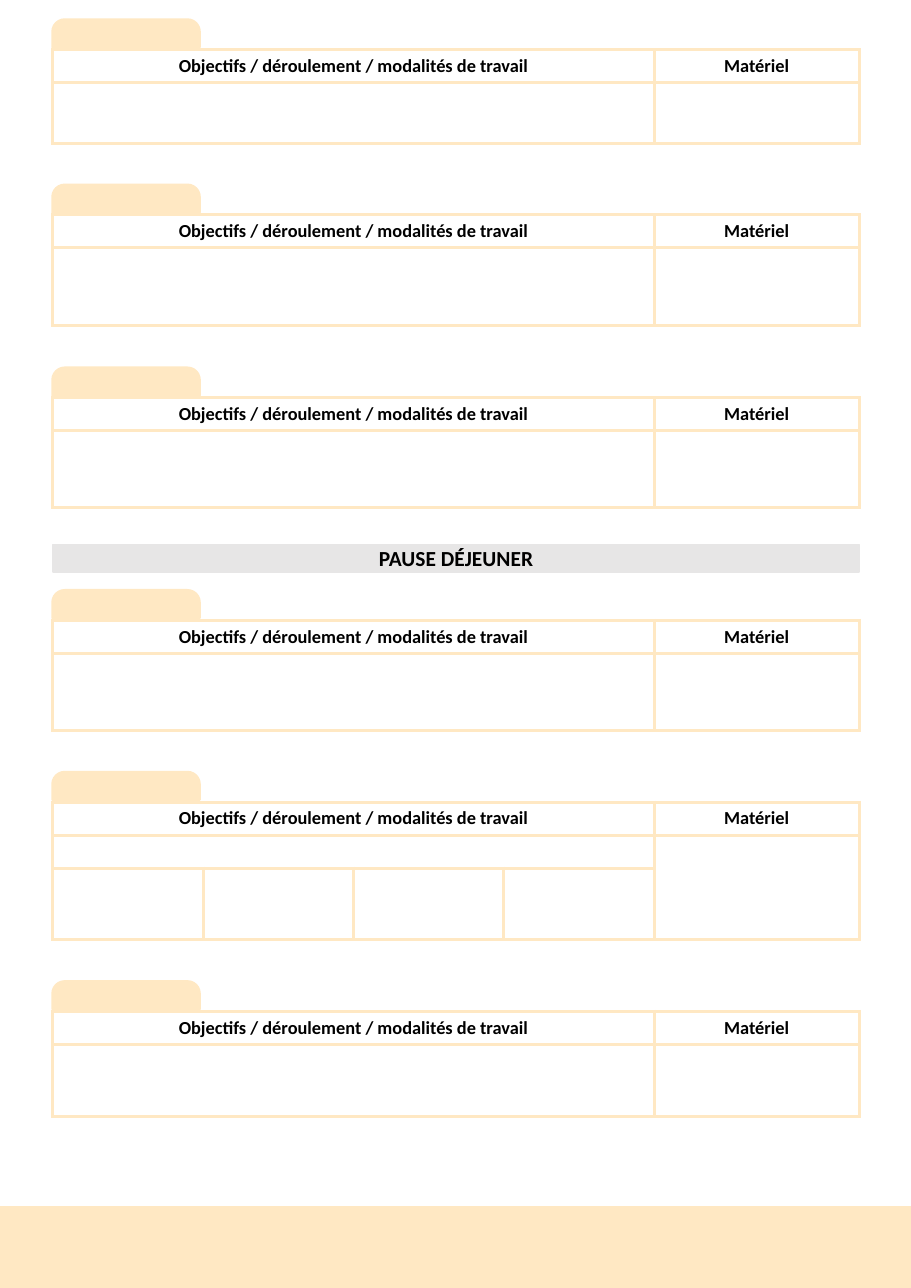
import pptx
import pptx.util
import pptx.dml.color
import pptx.enum.shapes
import pptx.enum.text
import pptx.oxml.ns
import lxml.etree
from dataclasses import dataclass

Inches = pptx.util.Inches
Shape = pptx.enum.shapes.MSO_SHAPE

HEADINGS = ("Objectifs / déroulement / modalités de travail", "Matériel")
BREAK_TEXT = "PAUSE DÉJEUNER"
SESSIONS = [
    {"top": 0.45, "body_rows": [0.55], "groups": 1},
    {"top": 1.95, "body_rows": [0.7], "groups": 1},
    {"top": 3.61, "body_rows": [0.7], "groups": 1},
    {"top": 5.63, "body_rows": [0.7], "groups": 1},
    {"top": 7.28, "body_rows": [0.3, 0.65], "groups": 4},
    {"top": 9.18, "body_rows": [0.65], "groups": 1},
]

PAGE_WIDTH, PAGE_HEIGHT = 8.27, 11.69
LEFT, CONTENT_WIDTH = 0.48, 7.32
MATERIAL_WIDTH = 1.86
HEADER_HEIGHT = 0.3
TAB_WIDTH, TAB_HEIGHT, TAB_RISE = 1.33, 0.25, 0.27
BREAK_TOP, BREAK_HEIGHT = 4.94, 0.25
FOOTER_HEIGHT = 0.74


@dataclass(frozen=True)
class Theme:
    accent: str = "FFE8C3"
    band: str = "E7E6E6"
    paper: str = "FFFFFF"
    ink: str = "000000"
    font: str = "Calibri"
    heading_size: int = 12
    break_size: int = 14
    border_width: float = 2.25


THEME = Theme()


def color(value):
    return pptx.dml.color.RGBColor.from_string(value)


def write_text(text_frame, text, size=THEME.heading_size, bold=True):
    paragraph = text_frame.paragraphs[0]
    paragraph.alignment = pptx.enum.text.PP_ALIGN.CENTER
    run = paragraph.add_run()
    run.text = text
    run.font.name = THEME.font
    run.font.size = pptx.util.Pt(size)
    run.font.bold = bold
    run.font.color.rgb = color(THEME.ink)


def add_block(slide, kind, left, top, width, height, fill, line_width):
    shape = slide.shapes.add_shape(
        kind, Inches(left), Inches(top), Inches(width), Inches(height))
    shape.shadow.inherit = False
    shape.fill.solid()
    shape.fill.fore_color.rgb = color(fill)
    shape.line.color.rgb = color(fill)
    shape.line.width = pptx.util.Pt(line_width)
    return shape


def format_cell(cell):
    qn = pptx.oxml.ns.qn
    cell.fill.solid()
    cell.fill.fore_color.rgb = color(THEME.paper)
    cell.vertical_anchor = pptx.enum.text.MSO_ANCHOR.MIDDLE
    cell.margin_top = cell.margin_bottom = Inches(0.04)
    properties = cell._tc.get_or_add_tcPr()
    for position, side in enumerate(("lnL", "lnR", "lnT", "lnB")):
        line = lxml.etree.Element(
            qn(f"a:{side}"), w=str(pptx.util.Pt(THEME.border_width)))
        fill = lxml.etree.SubElement(line, qn("a:solidFill"))
        lxml.etree.SubElement(fill, qn("a:srgbClr"), val=THEME.accent)
        properties.insert(position, line)
    paragraph = cell.text_frame.paragraphs[0]._p
    lxml.etree.SubElement(
        paragraph, qn("a:endParaRPr"), sz=str(THEME.heading_size * 100))


def add_session(slide, top, body_rows, groups):
    heights = [HEADER_HEIGHT] + body_rows
    group_width = (CONTENT_WIDTH - MATERIAL_WIDTH) / groups
    widths = [group_width] * groups + [MATERIAL_WIDTH]
    table = slide.shapes.add_table(
        len(heights), len(widths), Inches(LEFT), Inches(top),
        Inches(CONTENT_WIDTH), Inches(sum(heights))).table
    table.first_row = table.horz_banding = False
    for row, height in zip(table.rows, heights):
        row.height = Inches(height)
    for column, width in zip(table.columns, widths):
        column.width = Inches(width)
    for cell in table.iter_cells():
        format_cell(cell)
    if groups > 1:
        for row_index in range(len(heights) - 1):
            table.cell(row_index, 0).merge(table.cell(row_index, groups - 1))
        table.cell(1, groups).merge(table.cell(len(heights) - 1, groups))
    for column_index, heading in zip((0, groups), HEADINGS):
        write_text(table.cell(0, column_index).text_frame, heading)
    tab = add_block(slide, Shape.ROUND_2_SAME_RECTANGLE, LEFT, top - TAB_RISE,
                    TAB_WIDTH, TAB_HEIGHT, THEME.accent, 2)
    tab.adjustments[0] = 0.43
    tab.adjustments[1] = 0


def main():
    presentation = pptx.Presentation()
    presentation.slide_width = Inches(PAGE_WIDTH)
    presentation.slide_height = Inches(PAGE_HEIGHT)
    slide = presentation.slides.add_slide(presentation.slide_layouts[6])
    add_block(slide, Shape.RECTANGLE, 0, PAGE_HEIGHT - FOOTER_HEIGHT,
              PAGE_WIDTH, FOOTER_HEIGHT, THEME.accent, 1)
    for session in SESSIONS:
        add_session(slide, **session)
    lunch = add_block(slide, Shape.RECTANGLE, LEFT, BREAK_TOP,
                      CONTENT_WIDTH, BREAK_HEIGHT, THEME.band, 1)
    lunch.text_frame.vertical_anchor = pptx.enum.text.MSO_ANCHOR.MIDDLE
    write_text(lunch.text_frame, BREAK_TEXT, size=THEME.break_size)
    presentation.save("out.pptx")


if __name__ == "__main__":
    main()
